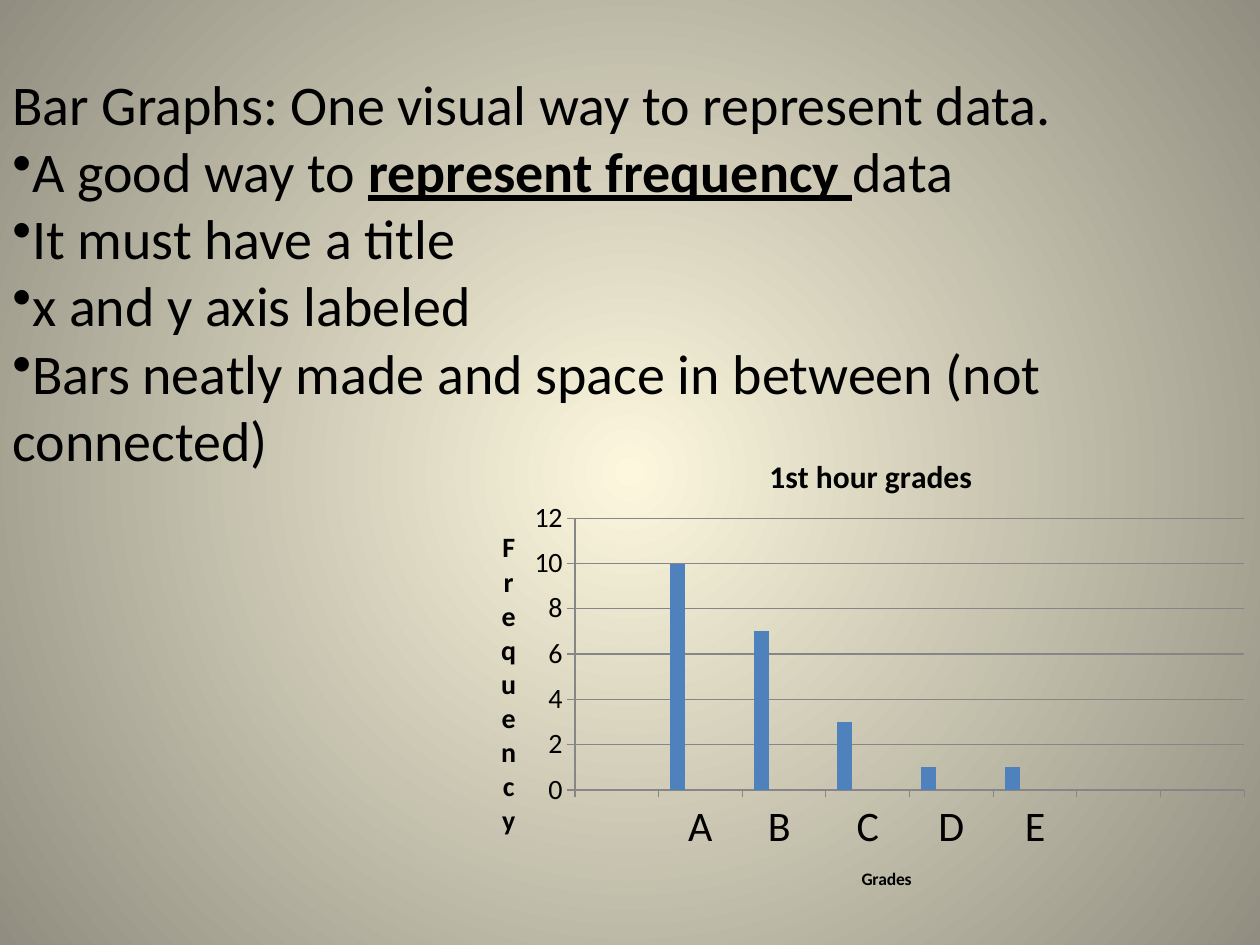
"""Build a slide on bar graphs with a frequency chart of grades."""
from pptx import Presentation
from pptx import util as u
from pptx.chart.data import CategoryChartData
from pptx.dml.color import RGBColor
from pptx.enum import chart as charts
from pptx.oxml import parse_xml
from pptx.oxml.ns import nsdecls, qn

FONT = "Calibri"
BLACK = RGBColor(0, 0, 0)
GRAY = RGBColor(0x86, 0x86, 0x86)
BACKGROUND = [RGBColor(0xFC, 0xF7, 0xDD), RGBColor(0x91, 0x8E, 0x81)]
SERIES_COLORS = [
    RGBColor(0x4F, 0x81, 0xBD),
    RGBColor(0xC0, 0x50, 0x4D),
    RGBColor(0x9B, 0xBB, 0x59),
    RGBColor(0x80, 0x64, 0xA2),
]

HEADING = "Bar Graphs: One visual way to represent data."
BULLETS = [
    [("A good way to ", False), ("represent frequency ", True), ("data", False)],
    [("It must have a title", False)],
    [("x and y axis labeled", False)],
    [("Bars neatly made and space in between (not connected)", False)],
]
GRADES = ["", "A", "B ", "C", "D", "E", "", ""]
FREQUENCIES = [None, 10, 7, 3, 1, 1, None, None]

WIDTH, HEIGHT = u.Inches(10), u.Inches(7.5)
TEXT_BOX = [u.Inches(n) for n in (0, 0.5, 8.83, 3.64)]
CHART_BOX = [u.Inches(n) for n in (3.75, 3.33, 6.25, 3.92)]
PLOT_SHARE = {"x": 0.13, "y": 0.2, "w": 0.85, "h": 0.55}


def set_font(font, size, bold=False):
    font.name, font.size, font.bold = FONT, u.Pt(size), bold
    font.color.rgb = BLACK


def add_text(paragraph, content, size=32, strong=False):
    run = paragraph.add_run()
    run.text = content
    set_font(run.font, size, strong)
    run.font.underline = strong


def make_layout(shares, inner=False):
    target = '<c:layoutTarget val="inner"/>' if inner else ""
    modes = "".join(f'<c:{key}Mode val="edge"/>' for key in "xy")
    values = "".join(f'<c:{key} val="{share}"/>' for key, share in shares.items())
    return parse_xml(
        f'<c:layout {nsdecls("c")}><c:manualLayout>{target}{modes}{values}'
        "</c:manualLayout></c:layout>"
    )


def remove_layout(element):
    for layout in element.findall(qn("c:layout")):
        element.remove(layout)


def add_title(title, content, size, x, y):
    add_text(title.text_frame.paragraphs[0], content, size)
    title.text_frame.paragraphs[0].runs[0].font.bold = True
    element = title.text_frame._txBody.getparent().getparent()
    remove_layout(element)
    element.find(qn("c:tx")).addnext(make_layout({"x": x, "y": y}))


def paint_background(slide):
    fill = slide.background.fill
    fill.gradient()
    for stop, color in zip(fill.gradient_stops, BACKGROUND):
        stop.color.rgb = color
    gradient = slide.element.find(".//" + qn("a:gradFill"))
    gradient.replace(gradient.find(qn("a:lin")), parse_xml(
        f'<a:path {nsdecls("a")} path="circle">'
        '<a:fillToRect l="50000" t="50000" r="50000" b="50000"/></a:path>'
    ))


def add_notes_text(slide):
    frame = slide.shapes.add_textbox(*TEXT_BOX).text_frame
    frame.word_wrap = True
    add_text(frame.paragraphs[0], HEADING)
    for runs in BULLETS:
        paragraph = frame.add_paragraph()
        paragraph._p.get_or_add_pPr().append(
            parse_xml(f'<a:buChar {nsdecls("a")} char="•"/>')
        )
        for content, strong in runs:
            add_text(paragraph, content, strong=strong)


def add_grade_chart(slide):
    data = CategoryChartData()
    data.categories = GRADES
    for number in range(1, len(SERIES_COLORS) + 1):
        values = FREQUENCIES if number == 1 else [None] * len(GRADES)
        data.add_series(f"Series {number}", values)
    chart = slide.shapes.add_chart(
        charts.XL_CHART_TYPE.COLUMN_CLUSTERED, *CHART_BOX, data
    ).chart
    set_font(chart.font, 10)
    chart.has_legend = False
    add_title(chart.chart_title, "1st hour grades", 18, 0.37, 0.06)
    chart.chart_title.include_in_layout = True

    plot = chart.plots[0]
    plot.gap_width, plot.overlap, plot.vary_by_categories = 150, 0, False
    for series, color in zip(plot.series, SERIES_COLORS):
        series.format.fill.solid()
        series.format.fill.fore_color.rgb = color

    category, value = chart.category_axis, chart.value_axis
    for axis, size in ((category, 24), (value, 16)):
        set_font(axis.tick_labels.font, size)
        axis.major_tick_mark = charts.XL_TICK_MARK.OUTSIDE
        axis.format.line.color.rgb = GRAY
    value.minimum_scale, value.maximum_scale, value.major_unit = 0, 12, 2
    value.has_major_gridlines = True
    value.major_gridlines.format.line.color.rgb = GRAY
    add_title(category.axis_title, "Grades", 10, 0.49, 0.9)
    add_title(value.axis_title, "Frequency", 16, 0.03, 0.21)
    body = value.axis_title.text_frame._txBody.find(qn("a:bodyPr"))
    body.set("rot", "0")
    body.set("vert", "wordArtVert")

    area = chart.element.find(".//" + qn("c:plotArea"))
    remove_layout(area)
    area.insert(0, make_layout(PLOT_SHARE, inner=True))


def main():
    presentation = Presentation()
    presentation.slide_width, presentation.slide_height = WIDTH, HEIGHT
    slide = presentation.slides.add_slide(presentation.slide_layouts[6])
    paint_background(slide)
    add_notes_text(slide)
    add_grade_chart(slide)
    presentation.save("out.pptx")


if __name__ == "__main__":
    main()
